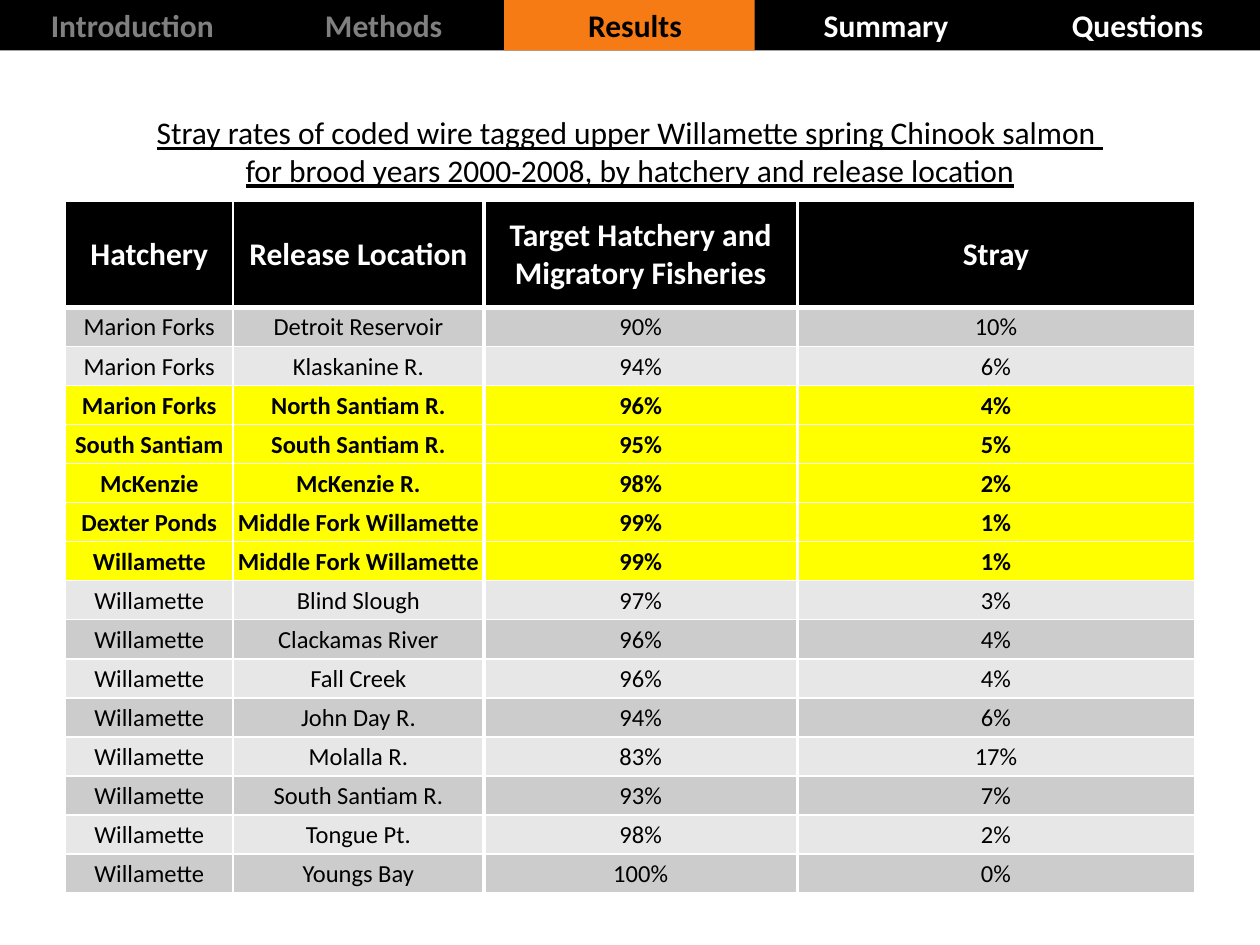
import pptx
import pptx.dml.color
import pptx.enum.shapes
import pptx.enum.text
import pptx.oxml
import pptx.oxml.ns
import pptx.util

Pt = pptx.util.Pt
RGBColor = pptx.dml.color.RGBColor
CENTER = pptx.enum.text.PP_ALIGN.CENTER
MIDDLE = pptx.enum.text.MSO_ANCHOR.MIDDLE

BLACK = RGBColor(0x00, 0x00, 0x00)
WHITE = RGBColor(0xFF, 0xFF, 0xFF)
GRAY = RGBColor(0x80, 0x80, 0x80)
ORANGE = RGBColor(0xF7, 0x7B, 0x15)
YELLOW = RGBColor(0xFF, 0xFF, 0x00)
BANDS = (RGBColor(0xCC, 0xCC, 0xCC), RGBColor(0xE7, 0xE7, 0xE7))

BAR_HEIGHT = 28.8
LEFT, WIDTH = 37.44, 645.12
HEADER_HEIGHT, ROW_HEIGHT = 60.48, 22.32
COLUMN_WIDTHS = (95.76, 143.28, 179.28, 226.8)
DIVIDERS = (1, 1, 2.25, 2.25, 1)  # vertical rules, left edge to right edge
HIGHLIGHTED = range(3, 8)

# Label, text width, colour
SECTIONS = (
    ("Introduction", 108, GRAY),
    ("Methods", 82, GRAY),
    ("Results", 68.4, BLACK),
    ("Summary", 86.4, WHITE),
    ("Questions", 90, WHITE),
)
TITLE = (
    "Stray rates of coded wire tagged upper Willamette spring Chinook salmon ",
    "for brood years 2000-2008, by hatchery and release location",
)
ROWS = (
    ("Hatchery", "Release Location", "Target Hatchery and Migratory Fisheries", "Stray"),
    ("Marion Forks", "Detroit Reservoir", "90%", "10%"),
    ("Marion Forks", "Klaskanine R.", "94%", "6%"),
    ("Marion Forks", "North Santiam R.", "96%", "4%"),
    ("South Santiam", "South Santiam R.", "95%", "5%"),
    ("McKenzie", "McKenzie R.", "98%", "2%"),
    ("Dexter Ponds", "Middle Fork Willamette", "99%", "1%"),
    ("Willamette", "Middle Fork Willamette", "99%", "1%"),
    ("Willamette", "Blind Slough", "97%", "3%"),
    ("Willamette", "Clackamas River", "96%", "4%"),
    ("Willamette", "Fall Creek", "96%", "4%"),
    ("Willamette", "John Day R.", "94%", "6%"),
    ("Willamette", "Molalla R.", "83%", "17%"),
    ("Willamette", "South Santiam R.", "93%", "7%"),
    ("Willamette", "Tongue Pt.", "98%", "2%"),
    ("Willamette", "Youngs Bay", "100%", "0%"),
)


class SlideBuilder:
    """Holds the text style and the slide being built."""

    font_name = "Calibri"

    def __init__(self, slide):
        self.slide = slide

    def add_text(self, paragraph, text, color, size=18, alignment=None, **formats):
        paragraph.alignment = alignment
        run = paragraph.add_run()
        run.text = text
        run.font.color.rgb = color
        formats.update(name=self.font_name, size=Pt(size))
        for attribute, value in formats.items():
            setattr(run.font, attribute, value)

    def title(self, lines, left, top, width, height):
        shape = self.slide.shapes.title
        place = {"left": left, "top": top, "width": width, "height": height}
        for attribute, value in place.items():
            setattr(shape, attribute, Pt(value))
        frame = shape.text_frame
        frame.word_wrap = True
        frame.auto_size = pptx.enum.text.MSO_AUTO_SIZE.NONE
        frame.vertical_anchor = pptx.enum.text.MSO_ANCHOR.TOP
        for index, line in enumerate(lines):
            paragraph = frame.add_paragraph() if index else frame.paragraphs[0]
            self.add_text(paragraph, line, BLACK, alignment=CENTER, underline=True)

    def rectangle(self, left, top, width, height, color):
        shape = self.slide.shapes.add_shape(
            pptx.enum.shapes.MSO_SHAPE.RECTANGLE,
            Pt(left), Pt(top), Pt(width), Pt(height))
        shape.shadow.inherit = False
        shape.fill.solid()
        shape.fill.fore_color.rgb = color
        shape.line.fill.background()

    def label(self, text, left, top, width, height, color):
        shape = self.slide.shapes.add_textbox(Pt(left), Pt(top), Pt(width), Pt(height))
        frame = shape.text_frame
        frame.word_wrap = False
        frame.auto_size = pptx.enum.text.MSO_AUTO_SIZE.SHAPE_TO_FIT_TEXT
        self.add_text(frame.paragraphs[0], text, color, bold=True)

    def table(self, rows, left, top, width):
        height = HEADER_HEIGHT + ROW_HEIGHT * (len(rows) - 1)
        table = self.slide.shapes.add_table(
            len(rows), len(COLUMN_WIDTHS), Pt(left), Pt(top), Pt(width), Pt(height)).table
        table.horz_banding = False
        for column, column_width in zip(table.columns, COLUMN_WIDTHS):
            column.width = Pt(column_width)
        for row_index, values in enumerate(rows):
            table.rows[row_index].height = Pt(ROW_HEIGHT if row_index else HEADER_HEIGHT)
            for column_index, text in enumerate(values):
                self.cell(table.cell(row_index, column_index), text, row_index, column_index)

    def cell(self, cell, text, row_index, column_index):
        highlighted = row_index in HIGHLIGHTED
        if row_index == 0:
            fill, color, size = BLACK, WHITE, 18
        else:
            fill = YELLOW if highlighted else BANDS[(row_index - 1) % 2]
            color, size = BLACK, 14
            margins = {"margin_left": 0.72, "margin_top": 0.72,
                       "margin_right": 0.72, "margin_bottom": 0}
            for attribute, value in margins.items():
                setattr(cell, attribute, Pt(value))
        cell.vertical_anchor = MIDDLE
        cell.fill.solid()
        cell.fill.fore_color.rgb = fill
        self.add_text(cell.text_frame.paragraphs[0], text, color, size, CENTER,
                      bold=row_index == 0 or highlighted)
        self.borders(cell, {
            "lnL": DIVIDERS[column_index],
            "lnR": DIVIDERS[column_index + 1],
            "lnT": 3 if row_index == 1 else 1,
            "lnB": 3 if row_index == 0 else 1,
        })

    def borders(self, cell, widths):
        properties = cell._tc.get_or_add_tcPr()
        for position, (tag, width) in enumerate(widths.items()):
            properties.insert(position, pptx.oxml.parse_xml(
                f'<a:{tag} {pptx.oxml.ns.nsdecls("a")} w="{Pt(width)}">'
                f'<a:solidFill><a:srgbClr val="{WHITE}"/></a:solidFill></a:{tag}>'))


def main():
    presentation = pptx.Presentation()
    presentation.slide_width, presentation.slide_height = Pt(720), Pt(540)
    builder = SlideBuilder(presentation.slides.add_slide(presentation.slide_layouts[5]))

    # Navigation bar with the current section marked
    builder.rectangle(0, 0, 720, BAR_HEIGHT, BLACK)
    builder.rectangle(288, 0, 143.28, BAR_HEIGHT, ORANGE)
    for index, (text, width, color) in enumerate(SECTIONS):
        center = 76 + 143.6 * index
        builder.label(text, center - width / 2, 0, width, BAR_HEIGHT, color)

    # Title and stray rates
    builder.title(TITLE, LEFT, 61.2, WIDTH, 51.12)
    builder.table(ROWS, LEFT, 115.2, WIDTH)

    presentation.save("out.pptx")


if __name__ == "__main__":
    main()
